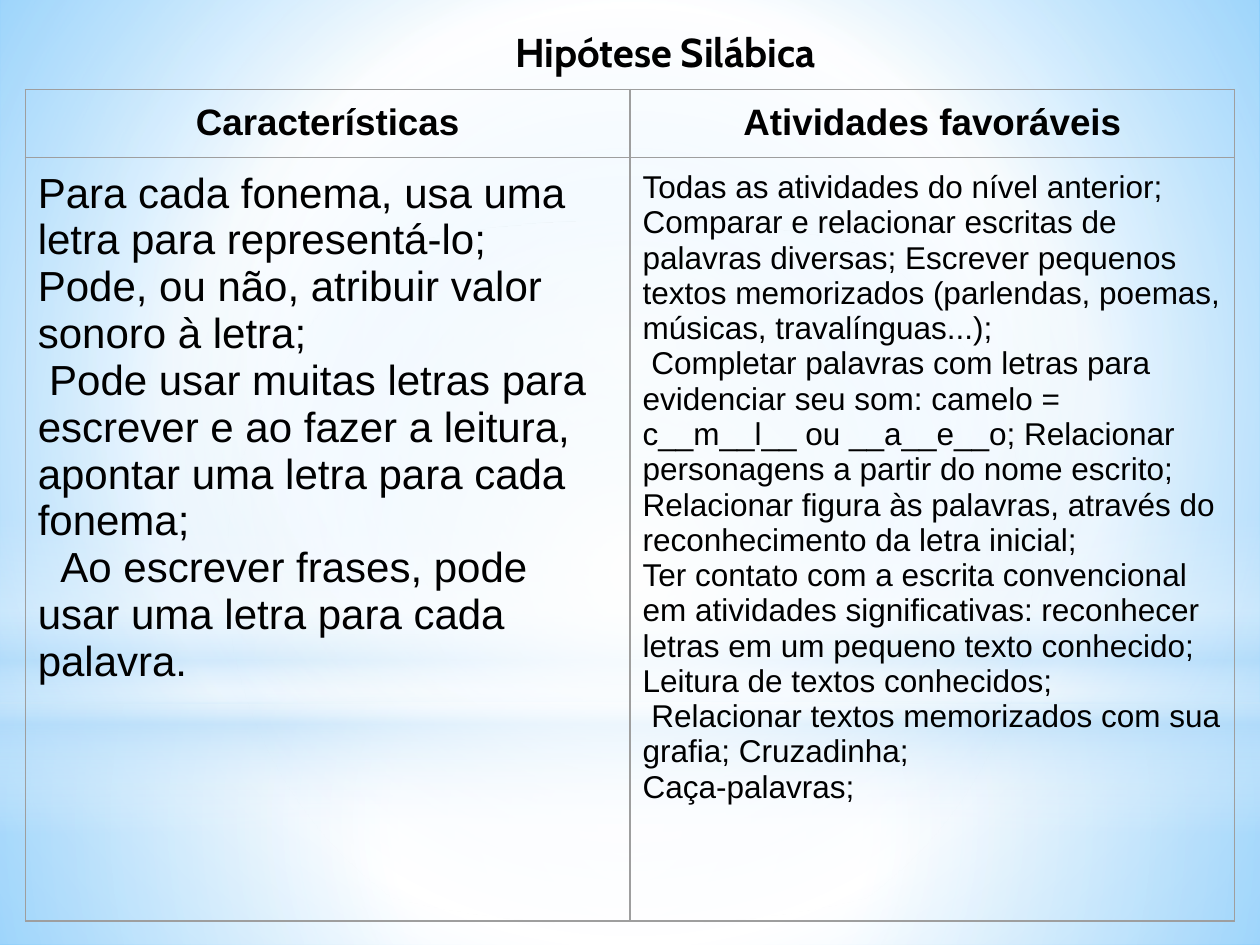
from dataclasses import dataclass

from pptx import Presentation
from pptx.dml.color import RGBColor as Rgb
from pptx.enum.shapes import MSO_SHAPE as Kind
from pptx.enum.text import MSO_AUTO_SIZE as Fit, PP_ALIGN as Align
from pptx.oxml import parse_xml
from pptx.oxml.ns import nsdecls, qn
from pptx.util import Inches, Pt

HEX = {"black": "000000", "white": "FFFFFF", "pale": "B4DCFA",
       "sky": "99D4FE", "blue": "54BDFF", "grey": "9E9E9E"}


@dataclass
class Stop:
    pos: int
    hue: str
    alpha: int = 100


@dataclass
class Glow:
    kind: int
    top: float
    high: float
    stops: list[Stop]
    round: bool = True


@dataclass
class Line:
    text: str
    indent: float = 0


@dataclass
class Block:
    row: int
    col: int
    lines: list[Line]
    size: int
    bold: bool = False
    align: int = Align.LEFT


GLOWS = [
    Glow(Kind.RECTANGLE, 5.58, 1.92,
         [Stop(0, "white", 89), Stop(37, "white", 74), Stop(100, "pale", 77)]),
    Glow(Kind.RECTANGLE, 0, 5.58,
         [Stop(0, "white", 87), Stop(48, "white", 60), Stop(100, "pale", 77)]),
    Glow(Kind.RECTANGLE, 4.12, 2.5,
         [Stop(0, "white", 0), Stop(29, "white", 28), Stop(45, "pale", 40),
          Stop(55, "white", 24), Stop(65, "pale", 60), Stop(100, "white", 0)], False),
    Glow(Kind.OVAL, 1.75, 5.58,
         [Stop(0, "white"), Stop(56, "white", 0), Stop(100, "white", 0)]),
]

BLOCKS = [
    Block(0, 0, [Line("Características")], 21, True, Align.CENTER),
    Block(0, 1, [Line("Atividades favoráveis")], 21, True, Align.CENTER),
    Block(1, 0, [
        Line("Para cada fonema, usa uma letra para representá-lo;\v"
             "Pode, ou não, atribuir valor sonoro à letra;"),
        Line("Pode usar muitas letras para escrever e ao fazer a leitura, "
             "apontar uma letra para cada fonema;", 0.09),
        Line("Ao escrever frases, pode usar uma letra para cada palavra.", 0.18),
    ], 24),
    Block(1, 1, [
        Line("Todas as atividades do nível anterior;"),
        Line("Comparar e relacionar escritas de palavras diversas; Escrever pequenos "
             "textos memorizados (parlendas, poemas, músicas, travalínguas...);"),
        Line("Completar palavras com letras para evidenciar seu som: camelo = "
             "c__m__l__ ou __a__e__o; Relacionar personagens a partir do nome escrito; "
             "Relacionar figura às palavras, através do reconhecimento da letra inicial;",
             0.07),
        Line("Ter contato com a escrita convencional em atividades significativas: "
             "reconhecer letras em um pequeno texto conhecido;"),
        Line("Leitura de textos conhecidos;"),
        Line("Relacionar textos memorizados com sua grafia; Cruzadinha;", 0.07),
        Line("Caça-palavras;"),
    ], 18),
]


def blend(stops: list[Stop], round: bool = True):
    marks = "".join(
        f'<a:gs pos="{s.pos * 1000}"><a:srgbClr val="{HEX[s.hue]}">'
        f'<a:alpha val="{s.alpha * 1000}"/></a:srgbClr></a:gs>' for s in stops)
    mode = ('<a:path path="circle"><a:fillToRect l="50000" t="50000" r="50000" b="50000"/>'
            '</a:path>' if round else '<a:lin ang="5400000" scaled="0"/>')
    return parse_xml(f'<a:gradFill {nsdecls("a")} rotWithShape="1">'
                     f'<a:gsLst>{marks}</a:gsLst>{mode}</a:gradFill>')


def swap(root, fill) -> None:
    old = next(root.iter(qn("a:solidFill")))
    old.getparent().replace(old, fill)


def style(font, name: str, size: int, bold: bool) -> None:
    for key, value in {"name": name, "size": Pt(size), "bold": bold}.items():
        setattr(font, key, value)
    font.color.rgb = Rgb.from_string(HEX["black"])


def pad(item) -> None:
    for side in ("left", "top", "right", "bottom"):
        setattr(item, f"margin_{side}", Inches(0.1))


def draw_glow(slide, glow: Glow) -> None:
    shape = slide.shapes.add_shape(glow.kind, 0, Inches(glow.top),
                                   Inches(10), Inches(glow.high))
    shape.shadow.inherit = False
    shape.line.fill.background()
    shape.fill.solid()
    swap(shape.element.spPr, blend(glow.stops, glow.round))


def draw_block(table, block: Block) -> None:
    cell = table.cell(block.row, block.col)
    cell.fill.background()
    pad(cell)
    props = cell._tc.get_or_add_tcPr()
    for spot, side in enumerate("LRTB"):
        props.insert(spot, parse_xml(
            f'<a:ln{side} {nsdecls("a")} w="{Pt(0.75)}"><a:solidFill>'
            f'<a:srgbClr val="{HEX["grey"]}"/></a:solidFill></a:ln{side}>'))
    frame = cell.text_frame
    for spot, line in enumerate(block.lines):
        para = frame.add_paragraph() if spot else frame.paragraphs[0]
        para.text = line.text
        para.alignment = block.align
        if line.indent:
            para._p.get_or_add_pPr().set("indent", str(Inches(line.indent)))
        for run in para.runs:
            style(run.font, "Arial", block.size, block.bold)


def draw_table(slide) -> None:
    table = slide.shapes.add_table(2, 2, Inches(0.2), Inches(0.71),
                                   Inches(9.6), Inches(6.6)).table
    table.first_row = table.horz_banding = False
    for row, high in zip(table.rows, (0.54, 6.06)):
        row.height = Inches(high)
    for block in BLOCKS:
        draw_block(table, block)


def draw_title(slide) -> None:
    box = slide.shapes.add_textbox(Inches(1.27), Inches(0.12), Inches(8.02), Inches(0.59))
    frame = box.text_frame
    frame.word_wrap = True
    frame.auto_size = Fit.SHAPE_TO_FIT_TEXT
    pad(frame)
    para = frame.paragraphs[0]
    para.alignment = Align.CENTER
    run = para.add_run()
    run.text = "Hipótese Silábica"
    style(run.font, "Cabin", 23, True)


def main() -> None:
    deck = Presentation()
    deck.slide_width, deck.slide_height = Inches(10), Inches(7.5)
    slide = deck.slides.add_slide(deck.slide_layouts[6])
    back = slide.background.fill
    back.solid()
    back.fore_color.rgb = Rgb.from_string(HEX["white"])
    swap(slide.element, blend([Stop(0, "sky"), Stop(60, "white"), Stop(100, "blue")]))
    for glow in GLOWS:
        draw_glow(slide, glow)
    draw_table(slide)
    draw_title(slide)
    deck.save("out.pptx")


if __name__ == "__main__":
    main()
